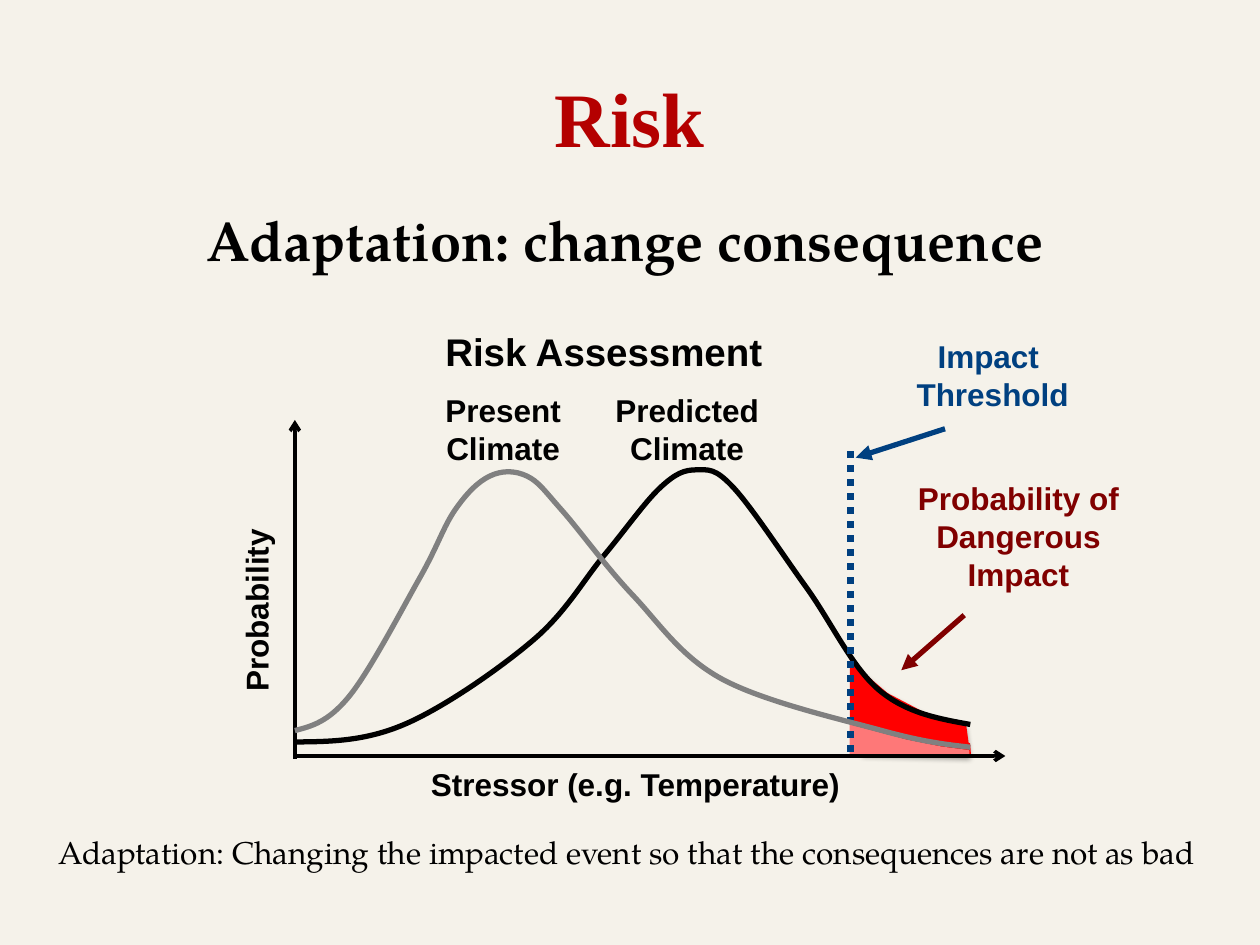
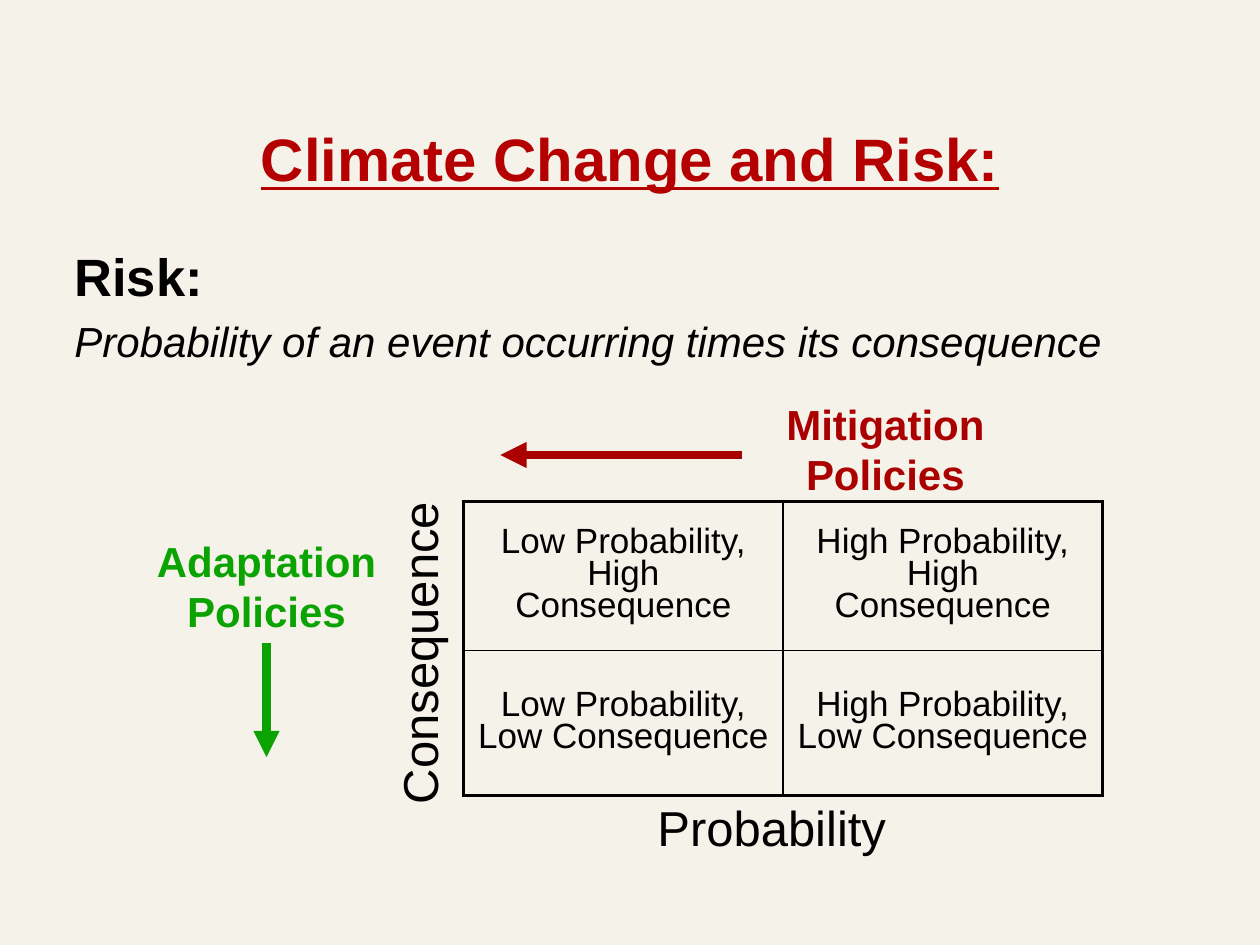
from dataclasses import dataclass
from typing import Optional

from lxml.etree import SubElement
from pptx import Presentation
from pptx.dml.color import RGBColor
from pptx.enum.dml import MSO_LINE
from pptx.enum.shapes import MSO_CONNECTOR
from pptx.enum.text import MSO_ANCHOR, PP_ALIGN
from pptx.oxml.ns import qn
from pptx.shapes.autoshape import Shape
from pptx.shapes.connector import Connector
from pptx.slide import Slide
from pptx.table import _Cell
from pptx.util import Pt

CREAM = RGBColor(0xF5, 0xF2, 0xEA)
BLACK = RGBColor(0x00, 0x00, 0x00)
TITLE_RED = RGBColor(0xB4, 0x00, 0x00)
RED = RGBColor(0xFF, 0x00, 0x00)
PINK = RGBColor(0xFE, 0x78, 0x78)
MAROON = RGBColor(0x80, 0x00, 0x00)
NAVY = RGBColor(0x00, 0x40, 0x80)
GRAY = RGBColor(0x80, 0x80, 0x80)
GREEN = RGBColor(0x0A, 0xA3, 0x01)
CRIMSON = RGBColor(0xAA, 0x00, 0x00)

SANS = "Arial"
SERIF = "Times New Roman"
BOOK = "TeX Gyre Pagella"

Point = tuple[float, float]
AXIS_X, AXIS_Y, THRESHOLD_X, CURVE_END_X = 168.5, 432, 486, 554.5


@dataclass(frozen=True)
class Label:
    text: str
    left: float
    top: float
    width: float
    height: float
    size: float = 18
    color: RGBColor = BLACK
    font: str = SANS
    bold: bool = True
    wrap: bool = True
    rotation: int = 0
    underline: bool = False
    align: PP_ALIGN = PP_ALIGN.CENTER
    anchor: MSO_ANCHOR = MSO_ANCHOR.TOP


@dataclass(frozen=True)
class Stroke:
    start: Point
    end: Point
    color: RGBColor
    width: float
    arrowhead: Optional[str] = None
    dotted: bool = False


@dataclass(frozen=True)
class Area:
    outline: list[Point]
    color: RGBColor
    shadowed: bool = False


@dataclass(frozen=True)
class Curve:
    knots: list[Point]
    color: RGBColor


RISK_AREAS = [
    Area([(493, 430.5), (554.5, 432), (552, 413.5), (530, 408), (507, 396), (492, 383)],
         RED, shadowed=True),
    Area([(THRESHOLD_X, 376), (500, 391), (509, 398), (516, 409), (527, 418), (536, 421),
          (554, 425), (CURVE_END_X, AXIS_Y), (THRESHOLD_X, AXIS_Y)], RED),
    Area([(THRESHOLD_X, 414.5), (518, 423), (538, 427), (553.5, 429),
          (553.5, 431.5), (THRESHOLD_X, 431.5)], PINK),
]
PREDICTED_CLIMATE = Curve(
    [(AXIS_X, 424), (231, 414), (304.5, 366), (345.5, 317), (377.5, 278.5), (398, 268.5),
     (419, 278.5), (461, 336), (502.5, 394.5), (CURVE_END_X, 414)], BLACK)
PRESENT_CLIMATE = Curve(
    [(AXIS_X, 417.5), (199.5, 398), (240, 330), (260, 291.5), (280, 272), (301, 272),
     (321, 291.5), (361.5, 340), (412.5, 388), (504, 417.5), (CURVE_END_X, 427)], GRAY)

RISK_LABELS = [
    Label("Risk Assessment", 189, 184, 312, 34, 22),
    Label("Probability of Dangerous Impact", 498, 270.2, 168, 72, color=MAROON),
    Label("Present Climate", 221.5, 220, 132, 50),
    Label("Predicted Climate", 323.7, 220, 138, 50),
    Label("Stressor (e.g. Temperature)", 189, 433.4, 348, 29),
    Label("Probability", 59, 334.4, 175, 29, rotation=270),
    Label("Impact \nThreshold", 516.5, 189.2, 101.5, 50, color=NAVY, wrap=False),
    Label("Risk", 36, 21.6, 648, 90, 44, TITLE_RED, SERIF, anchor=MSO_ANCHOR.MIDDLE),
    Label("Adaptation: change consequence", 110.9, 113.8, 498, 46, 32, font=BOOK,
          wrap=False, align=PP_ALIGN.LEFT),
    Label("Adaptation: Changing the impacted event so that the consequences are not as bad",
          26.6, 472.3, 672, 29, font=BOOK, bold=False, wrap=False, align=PP_ALIGN.LEFT),
]
RISK_STROKES = [
    Stroke((AXIS_X, 433.5), (AXIS_X, 240), BLACK, 2, "arrow"),
    Stroke((AXIS_X, AXIS_Y), (574.5, AXIS_Y), BLACK, 2, "arrow"),
    Stroke((THRESHOLD_X, 258), (THRESHOLD_X, 432.5), NAVY, 4, dotted=True),
    Stroke((551, 351.5), (515, 383), MAROON, 3, "triangle"),
    Stroke((540, 245), (489, 261.5), NAVY, 3, "triangle"),
]

ADAPTATION = Label("Adaptation\nPolicies", 82.3, 302.4, 140, 65, 24, GREEN, wrap=False)
POLICY_LABELS = [
    Label("Climate Change and Risk:", 36, 64, 648, 52.6, 34.2, TITLE_RED,
          underline=True, anchor=MSO_ANCHOR.MIDDLE),
    Label("Probability", 368.6, 452.2, 152.6, 41, 28, bold=False, wrap=False,
          align=PP_ALIGN.LEFT),
    Label("Consequence", 141.8, 348.5, 195, 41, 28, bold=False, wrap=False, rotation=270,
          align=PP_ALIGN.LEFT),
    Label("Mitigation\nPolicies", 442.2, 223.9, 127.5, 65, 24, CRIMSON, wrap=False),
]
RISK_MATRIX = [
    ["Low Probability, High Consequence", "High Probability, High Consequence"],
    ["Low Probability, Low Consequence", "High Probability, Low Consequence"],
]


def new_slide(deck: Presentation) -> Slide:
    slide = deck.slides.add_slide(deck.slide_layouts[6])
    slide.background.fill.solid()
    slide.background.fill.fore_color.rgb = CREAM
    return slide


def draw_label(slide: Slide, label: Label) -> Shape:
    box = slide.shapes.add_textbox(
        Pt(label.left), Pt(label.top), Pt(label.width), Pt(label.height))
    box.rotation = label.rotation
    frame = box.text_frame
    frame.word_wrap = label.wrap
    frame.vertical_anchor = label.anchor
    frame.text = label.text
    for paragraph in frame.paragraphs:
        paragraph.alignment = label.align
        font = paragraph.runs[0].font
        font.name, font.size = label.font, Pt(label.size)
        font.bold, font.underline = label.bold, label.underline
        font.color.rgb = label.color
    return box


def draw_stroke(slide: Slide, stroke: Stroke) -> Connector:
    connector = slide.shapes.add_connector(
        MSO_CONNECTOR.STRAIGHT, *(Pt(value) for value in stroke.start + stroke.end))
    connector.line.color.rgb = stroke.color
    connector.line.width = Pt(stroke.width)
    if stroke.dotted:
        connector.line.dash_style = MSO_LINE.ROUND_DOT
    if stroke.arrowhead:
        SubElement(connector.line._get_or_add_ln(), qn("a:tailEnd"), type=stroke.arrowhead)
    SubElement(connector._element.spPr, qn("a:effectLst"))
    return connector


def draw_outline(slide: Slide, points: list[Point], close: bool) -> Shape:
    start, *rest = [(Pt(x), Pt(y)) for x, y in points]
    builder = slide.shapes.build_freeform(*start, scale=1.0)
    builder.add_line_segments(rest, close=close)
    outline = builder.convert_to_shape()
    outline.shadow.inherit = False
    return outline


def draw_area(slide: Slide, area: Area) -> None:
    shape = draw_outline(slide, area.outline, close=True)
    shape.fill.solid()
    shape.fill.fore_color.rgb = area.color
    if area.shadowed:
        shape.line.fill.background()
        effects = shape._element.spPr.find(qn("a:effectLst"))
        shadow = SubElement(effects, qn("a:outerShdw"), blurRad=str(Pt(3.1)),
                            dist=str(Pt(1.6)), dir="5400000", rotWithShape="0")
        tint = SubElement(shadow, qn("a:srgbClr"), val=str(BLACK))
        SubElement(tint, qn("a:alpha"), val="38000")
    else:
        shape.line.color.rgb = area.color
        shape.line.width = Pt(0.75)


def midpoint(a: Point, b: Point) -> Point:
    return (a[0] + b[0]) / 2, (a[1] + b[1]) / 2


def smooth_segments(knots: list[Point]) -> list[tuple[Point, Point, Point]]:
    def handle(index: int, direction: int) -> Point:
        before, knot, after = knots[index - 1:index + 2]
        return (knot[0] + direction * (after[0] - before[0]) / 6,
                knot[1] + direction * (after[1] - before[1]) / 6)

    last = len(knots) - 1
    segments = []
    for i in range(last):
        start, end = knots[i], knots[i + 1]
        leave = handle(i, 1) if i > 0 else midpoint(start, handle(1, -1))
        arrive = handle(i + 1, -1) if i + 1 < last else midpoint(leave, end)
        segments.append((leave, arrive, end))
    return segments


def draw_curve(slide: Slide, curve: Curve) -> None:
    shape = draw_outline(slide, curve.knots, close=False)
    straight_parts = list(shape._element.iter(qn("a:lnTo")))
    for straight, segment in zip(straight_parts, smooth_segments(curve.knots)):
        outline = straight.getparent()
        bend = SubElement(outline, qn("a:cubicBezTo"))
        for x, y in segment:
            SubElement(bend, qn("a:pt"), x=str(Pt(x) - shape.left), y=str(Pt(y) - shape.top))
        outline.replace(straight, bend)
    shape.fill.background()
    shape.line.color.rgb = curve.color
    shape.line.width = Pt(3)


def set_borders(cell: _Cell, widths: dict[str, float]) -> None:
    properties = cell._tc.get_or_add_tcPr()
    for position, (side, width) in enumerate(widths.items()):
        border = SubElement(properties, qn(f"a:ln{side}"), w=str(Pt(width)))
        fill = SubElement(border, qn("a:solidFill"))
        SubElement(fill, qn("a:srgbClr"), val=str(BLACK))
        properties.insert(position, border)


def draw_risk_matrix(slide: Slide) -> None:
    matrix = slide.shapes.add_table(2, 2, Pt(265), Pt(286.5), Pt(365), Pt(168)).table
    matrix.first_row = matrix.horz_banding = False
    for column in matrix.columns:
        column.width = Pt(182.5)
    for row, height in zip(matrix.rows, (85.2, 82.8)):
        row.height = Pt(height)
    outer, inner = 2.25, 1
    for r, row_texts in enumerate(RISK_MATRIX):
        for c, text in enumerate(row_texts):
            cell = matrix.cell(r, c)
            cell.fill.background()
            cell.vertical_anchor = MSO_ANCHOR.MIDDLE
            cell.text_frame.text = text
            paragraph = cell.text_frame.paragraphs[0]
            paragraph.alignment = PP_ALIGN.CENTER
            paragraph.line_spacing = 0.81
            paragraph.space_after = Pt(12.9)
            font = paragraph.runs[0].font
            font.name, font.size, font.color.rgb = SANS, Pt(20), BLACK
            set_borders(cell, {"L": inner if c else outer, "R": outer if c else inner,
                               "T": inner if r else outer, "B": outer if r else inner})


def draw_definition(slide: Slide) -> None:
    frame = slide.shapes.add_textbox(Pt(35.5), Pt(136.1), Pt(640), Pt(342)).text_frame
    frame.word_wrap = True
    frame.text = "Risk:\nProbability of an event occurring times its consequence"
    term, meaning = frame.paragraphs
    meaning.space_before = Pt(4.8)
    for paragraph, size in ((term, 30), (meaning, 24)):
        font = paragraph.runs[0].font
        font.name, font.size, font.color.rgb = SANS, Pt(size), BLACK
        font.bold, font.italic = paragraph is term, paragraph is meaning


def build_risk_slide(deck: Presentation) -> None:
    slide = new_slide(deck)
    for area in RISK_AREAS:
        draw_area(slide, area)
    draw_curve(slide, PREDICTED_CLIMATE)
    for stroke in RISK_STROKES:
        draw_stroke(slide, stroke)
    draw_curve(slide, PRESENT_CLIMATE)
    for label in RISK_LABELS:
        draw_label(slide, label)


def build_policy_slide(deck: Presentation) -> None:
    slide = new_slide(deck)
    draw_definition(slide)
    draw_risk_matrix(slide)
    for label in POLICY_LABELS:
        draw_label(slide, label)
    adaptation = draw_label(slide, ADAPTATION)
    downward = draw_stroke(slide, Stroke((152.3, 367.4), (152.3, 432.7), GREEN, 5, "triangle"))
    downward.begin_connect(adaptation, 2)
    draw_stroke(slide, Stroke((424, 260), (286, 260), CRIMSON, 5, "triangle"))


def main() -> None:
    deck = Presentation()
    deck.slide_width, deck.slide_height = Pt(720), Pt(540)
    build_risk_slide(deck)
    build_policy_slide(deck)
    deck.save("out.pptx")


if __name__ == "__main__":
    main()
